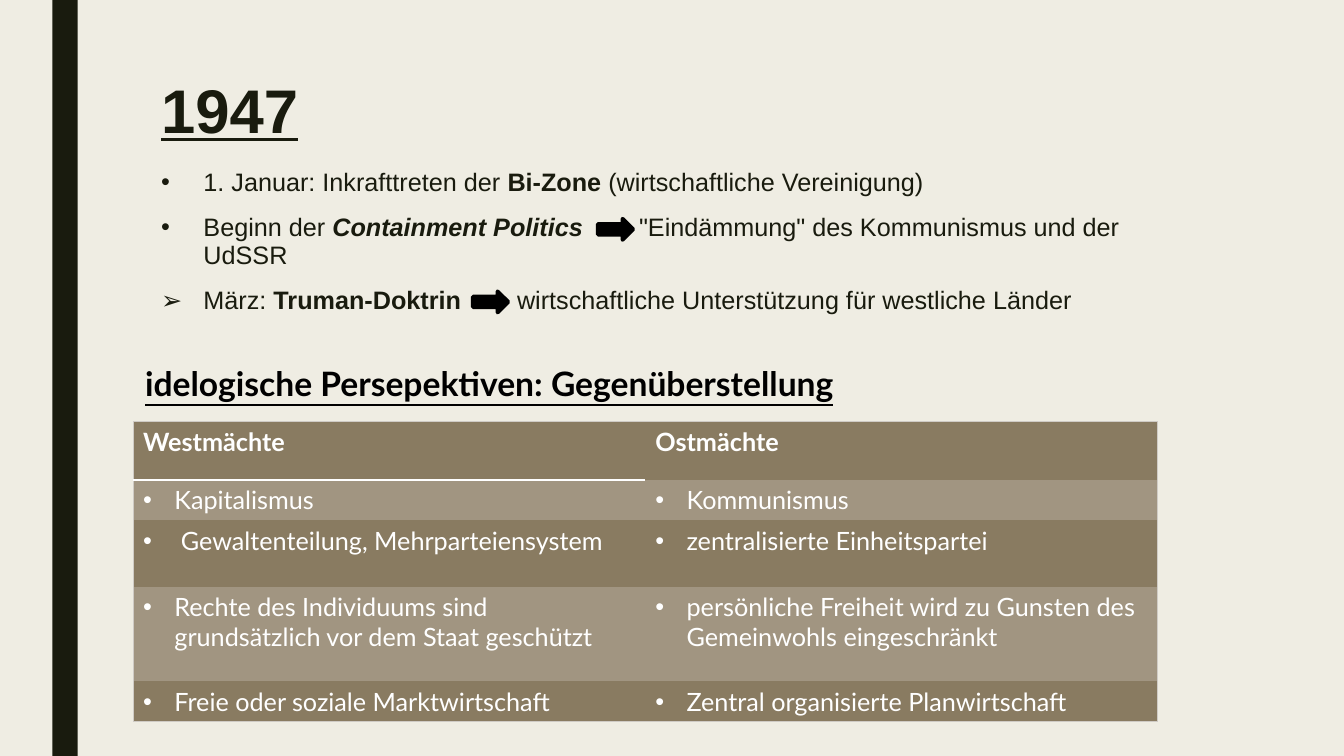
from lxml import etree
from pptx import Presentation
from pptx.dml.color import RGBColor
from pptx.enum.shapes import MSO_SHAPE
from pptx.oxml.ns import qn
from pptx.util import Inches, Pt

RECTANGLE = MSO_SHAPE.RECTANGLE
RIGHT_ARROW = MSO_SHAPE.RIGHT_ARROW

COLORS = {
    "background": "EFEDE3",
    "dark": "191B0E",
    "black": "000000",
    "white": "FFFFFF",
    "row": "897B61",
    "light row": "A19581",
    "border": "CFCBC5",
}


def color(name):
    return RGBColor.from_string(COLORS[name])


def add_text(paragraph, text, font="Arial", size=18, fill="dark", bold=False,
             italic=False, underline=False, bullet=None, indent=0, tab=None):
    """Append a run; bullet, indent and tab stop (inches) apply to its paragraph."""
    run = paragraph.add_run()
    run.text = text
    run.font.name = font
    run.font.size = Pt(size)
    run.font.color.rgb = color(fill)
    run.font.bold, run.font.italic, run.font.underline = bold, italic, underline
    properties = paragraph._p.get_or_add_pPr()
    if bullet:
        properties.set("marL", str(Inches(indent)))
        properties.set("indent", str(-Inches(indent)))
        etree.SubElement(properties, qn("a:buFont"), typeface="Arial")
        etree.SubElement(properties, qn("a:buChar"), char=bullet)
    if tab:
        tab_list = etree.SubElement(properties, qn("a:tabLst"))
        etree.SubElement(tab_list, qn("a:tab"), pos=str(Inches(tab)), algn="l")


presentation = Presentation()
presentation.slide_width = Inches(13.33)
presentation.slide_height = Inches(7.5)
slide = presentation.slides.add_slide(presentation.slide_layouts[6])
slide.background.fill.solid()
slide.background.fill.fore_color.rgb = color("background")

# Side bar and the two arrows inside the bullet text
for kind, left, top, width, height, fill in [
    (RECTANGLE, 0.52, 0, 0.25, 7.5, "dark"),
    (RIGHT_ARROW, 5.93, 2.17, 0.35, 0.21, "black"),
    (RIGHT_ARROW, 4.69, 2.89, 0.35, 0.21, "black"),
]:
    shape = slide.shapes.add_shape(
        kind, Inches(left), Inches(top), Inches(width), Inches(height))
    shape.shadow.inherit = False
    shape.fill.solid()
    shape.fill.fore_color.rgb = color(fill)
    if kind == RIGHT_ARROW:
        shape.line.color.rgb = color(fill)
        shape.line.width = Pt(2.75)
    else:
        shape.line.fill.background()

# Text boxes
frames = []
for left, top, width, height in [
    (1.5, 0.75, 10.5, 0.8),
    (1.5, 1.62, 10.5, 1.62),
    (1.34, 3.55, 7.87, 0.5),
]:
    box = slide.shapes.add_textbox(
        Inches(left), Inches(top), Inches(width), Inches(height))
    box.text_frame.word_wrap = True
    frames.append(box.text_frame)
title, body, heading = frames

title.paragraphs[0].line_spacing = 0.89
add_text(title.paragraphs[0], "1947", size=44, bold=True, underline=True)
add_text(heading.paragraphs[0], "idelogische Persepektiven: Gegenüberstellung",
         font="Lato", size=24, fill="black", bold=True, underline=True)

# Bullet, tab stop after the arrow, lead, emphasis, italic, rest
events = [
    ("•", None, "1. Januar: Inkrafttreten der ", "Bi-Zone", False,
     " (wirtschaftliche Vereinigung)"),
    ("•", 4.74, "Beginn der ", "Containment Politics", True,
     "\t\"Eindämmung\" des Kommunismus und der UdSSR"),
    ("➢", 3.53, "März: ", "Truman-Doktrin", False,
     "\twirtschaftliche Unterstützung für westliche Länder"),
]
for number, (bullet, tab, lead, emphasis, italic, rest) in enumerate(events):
    paragraph = body.add_paragraph() if number else body.paragraphs[0]
    paragraph.line_spacing = 0.94
    paragraph.space_before = Pt(10)
    paragraph.space_after = Pt(2)
    add_text(paragraph, lead, bullet=bullet, indent=0.42, tab=tab)
    add_text(paragraph, emphasis, bold=True, italic=italic)
    add_text(paragraph, rest)

# Comparison table
rows = [
    (0.58, "Westmächte", "Ostmächte"),
    (0.40, "Kapitalismus", "Kommunismus"),
    (0.66, " Gewaltenteilung, Mehrparteiensystem", "zentralisierte Einheitspartei"),
    (0.94, "Rechte des Individuums sind grundsätzlich vor dem Staat geschützt",
     "persönliche Freiheit wird zu Gunsten des Gemeinwohls eingeschränkt"),
    (0.40, "Freie oder soziale Marktwirtschaft", "Zentral organisierte Planwirtschaft"),
]
last_row = len(rows) - 1
table = slide.shapes.add_table(
    len(rows), 2, Inches(1.32), Inches(4.18), Inches(10.16), Inches(2.98)).table
for row, (height, *texts) in enumerate(rows):
    table.rows[row].height = Inches(height)
    for column, text in enumerate(texts):
        cell = table.cell(row, column)
        add_text(cell.text_frame.paragraphs[0], text, font="Lato", fill="white",
                 bold=row == 0, bullet="•" if row else None, indent=0.31)
        borders = {
            "a:lnL": ("border", 0.5) if column == 0 else None,
            "a:lnR": ("border", 0.5) if column == 1 else None,
            "a:lnT": ("border", 0.5) if row == 0 else None,
            "a:lnB": ("border", 0.5) if row == last_row else None,
        }
        if column == 0 and row < 2:
            borders["a:lnT" if row else "a:lnB"] = ("white", 1.5)
        for tag, border in borders.items():
            line = etree.SubElement(cell._tc.get_or_add_tcPr(), qn(tag))
            if border:
                line.set("w", str(Pt(border[1])))
                solid = etree.SubElement(line, qn("a:solidFill"))
                etree.SubElement(solid, qn("a:srgbClr"), val=COLORS[border[0]])
            else:
                line.set("w", "0")
                etree.SubElement(line, qn("a:noFill"))
        cell.fill.solid()
        cell.fill.fore_color.rgb = color("light row" if row % 2 else "row")

presentation.save("out.pptx")
